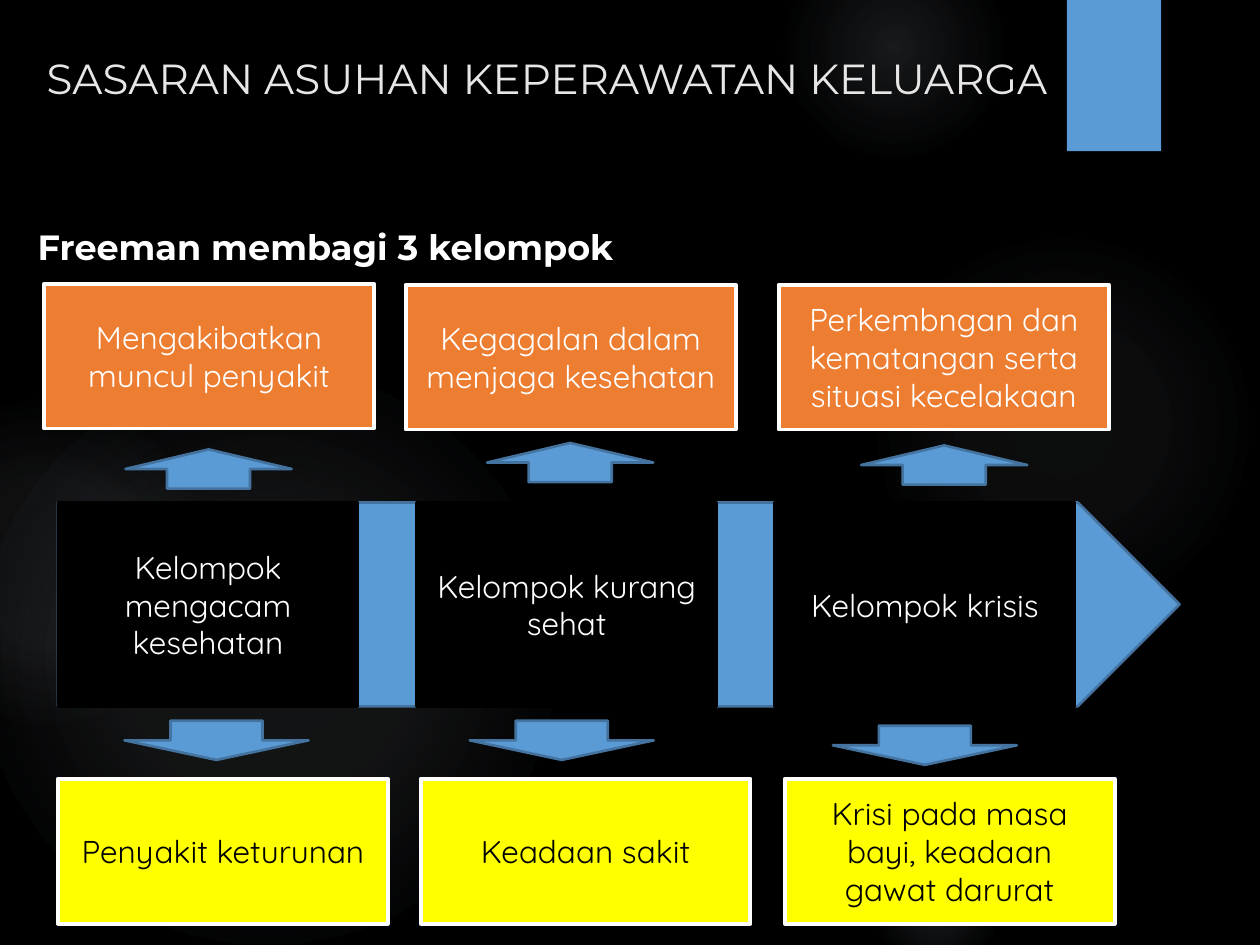
from pptx import Presentation
from pptx.dml.color import RGBColor
from pptx.enum.shapes import MSO_SHAPE
from pptx.enum.text import MSO_ANCHOR, PP_ALIGN
from pptx.oxml import parse_xml
from pptx.oxml.ns import nsdecls
from pptx.util import Cm, Pt

BLACK = RGBColor(0x00, 0x00, 0x00)
WHITE = RGBColor(0xFF, 0xFF, 0xFF)
LIGHT_GREY = RGBColor(0xE7, 0xE6, 0xE6)
BLUE = RGBColor(0x5B, 0x9B, 0xD5)
DARK_BLUE = RGBColor(0x43, 0x73, 0x9E)
ORANGE = RGBColor(0xED, 0x7D, 0x31)
YELLOW = RGBColor(0xFF, 0xFF, 0x00)
GLOW = RGBColor(0xAD, 0xB9, 0xCA)

presentation = Presentation()
presentation.slide_width = Cm(25.4)
presentation.slide_height = Cm(19.05)
slide = presentation.slides.add_slide(presentation.slide_layouts[6])
slide.background.fill.solid()
slide.background.fill.fore_color.rgb = BLACK


def add_shape(kind, left, top, width, height, fill, line=None, line_width=1.5):
    shape = slide.shapes.add_shape(kind, Cm(left), Cm(top), Cm(width), Cm(height))
    shape.shadow.inherit = False
    shape.fill.solid()
    shape.fill.fore_color.rgb = fill
    if line is None:
        shape.line.fill.background()
    else:
        shape.line.color.rgb = line
        shape.line.width = Pt(line_width)
    return shape


def write_text(shape, text, size, font, color, align, anchor, bold=False):
    frame = shape.text_frame
    frame.word_wrap = True
    frame.vertical_anchor = anchor
    paragraph = frame.paragraphs[0]
    paragraph.alignment = align
    run = paragraph.add_run()
    run.text = text
    run.font.size = Pt(size)
    run.font.name = font
    run.font.bold = bold
    run.font.color.rgb = color


# Soft glows: left, top, diameter, then (position, opacity) stops in percent
glows = [
    (17.5, 4.65, 7.82, [(0, 7), (36, 6), (69, 0)]),
    (15.8, -1.27, 4.45, [(0, 14), (36, 7), (73, 0)]),
    (17.5, 16.94, 2.74, [(0, 14), (36, 7), (66, 0)]),
    (-0.43, 7.42, 11.63, [(0, 11), (36, 10), (75, 0)]),
    (-2.34, 8.05, 6.55, [(0, 8), (36, 8), (72, 0)]),
]
for left, top, diameter, stops in glows:
    glow = add_shape(MSO_SHAPE.OVAL, left, top, diameter, diameter, GLOW)
    stop_xml = "".join(
        f'<a:gs pos="{position * 1000}"><a:srgbClr val="{GLOW}">'
        f'<a:alpha val="{opacity * 1000}"/></a:srgbClr></a:gs>'
        for position, opacity in stops
    )
    gradient = parse_xml(
        f'<a:gradFill {nsdecls("a")} rotWithShape="1"><a:gsLst>{stop_xml}</a:gsLst>'
        '<a:path path="circle"><a:fillToRect l="50000" t="50000" r="50000" b="50000"/>'
        "</a:path></a:gradFill>"
    )
    properties = glow._element.spPr
    properties.replace(properties.find(
        "{http://schemas.openxmlformats.org/drawingml/2006/main}solidFill"), gradient)

# Corner tab
add_shape(MSO_SHAPE.RECTANGLE, 21.51, 0, 1.9, 3.05, BLUE)

# Title and subtitle
title = slide.shapes.add_textbox(Cm(0.51), Cm(0.94), Cm(21.03), Cm(2.29))
write_text(title, "SASARAN ASUHAN KEPERAWATAN KELUARGA", 24, "Montserrat",
           LIGHT_GREY, PP_ALIGN.CENTER, MSO_ANCHOR.TOP)
subtitle = slide.shapes.add_textbox(Cm(0.51), Cm(4.42), Cm(18.64), Cm(1.32))
write_text(subtitle, "Freeman membagi 3 kelompok", 20, "Montserrat",
           WHITE, PP_ALIGN.LEFT, MSO_ANCHOR.TOP, bold=True)

# Wide arrow behind the groups
add_shape(MSO_SHAPE.PENTAGON, 1.17, 10.13, 22.61, 4.11, BLUE, DARK_BLUE)

# Small arrows: left, top
up_arrows = [(2.53, 9.06), (9.82, 8.93), (17.36, 8.98)]
down_arrows = [(2.51, 14.53), (9.47, 14.53), (16.79, 14.63)]
for kind, width, places in [(MSO_SHAPE.UP_ARROW, 3.35, up_arrows),
                            (MSO_SHAPE.DOWN_ARROW, 3.71, down_arrows)]:
    for left, top in places:
        add_shape(kind, left, top, width, 0.79, BLUE, DARK_BLUE)

# Rows of boxes: size, fill, line, line width, text colour, then left, top, text
rows = [
    (6.05, 4.11, BLACK, BLACK, 1.5, WHITE, [
        (1.17, 10.13, "Kelompok mengacam kesehatan"),
        (8.4, 10.13, "Kelompok kurang sehat"),
        (15.62, 10.13, "Kelompok krisis"),
    ]),
    (6.65, 2.92, ORANGE, WHITE, 2.25, WHITE, [
        (0.89, 5.72, "Mengakibatkan muncul penyakit"),
        (8.18, 5.74, "Kegagalan dalam menjaga kesehatan"),
        (15.7, 5.74, "Perkembngan dan kematangan serta situasi kecelakaan"),
    ]),
    (6.65, 2.92, YELLOW, WHITE, 2.25, BLACK, [
        (1.17, 15.7, "Penyakit keturunan"),
        (8.48, 15.7, "Keadaan sakit"),
        (15.82, 15.7, "Krisi pada masa bayi, keadaan gawat darurat"),
    ]),
]
for width, height, fill, line, line_width, text_color, boxes in rows:
    for left, top, text in boxes:
        box = add_shape(MSO_SHAPE.RECTANGLE, left, top, width, height,
                        fill, line, line_width)
        write_text(box, text, 18, "Quicksand", text_color,
                   PP_ALIGN.CENTER, MSO_ANCHOR.MIDDLE)

presentation.save("out.pptx")
